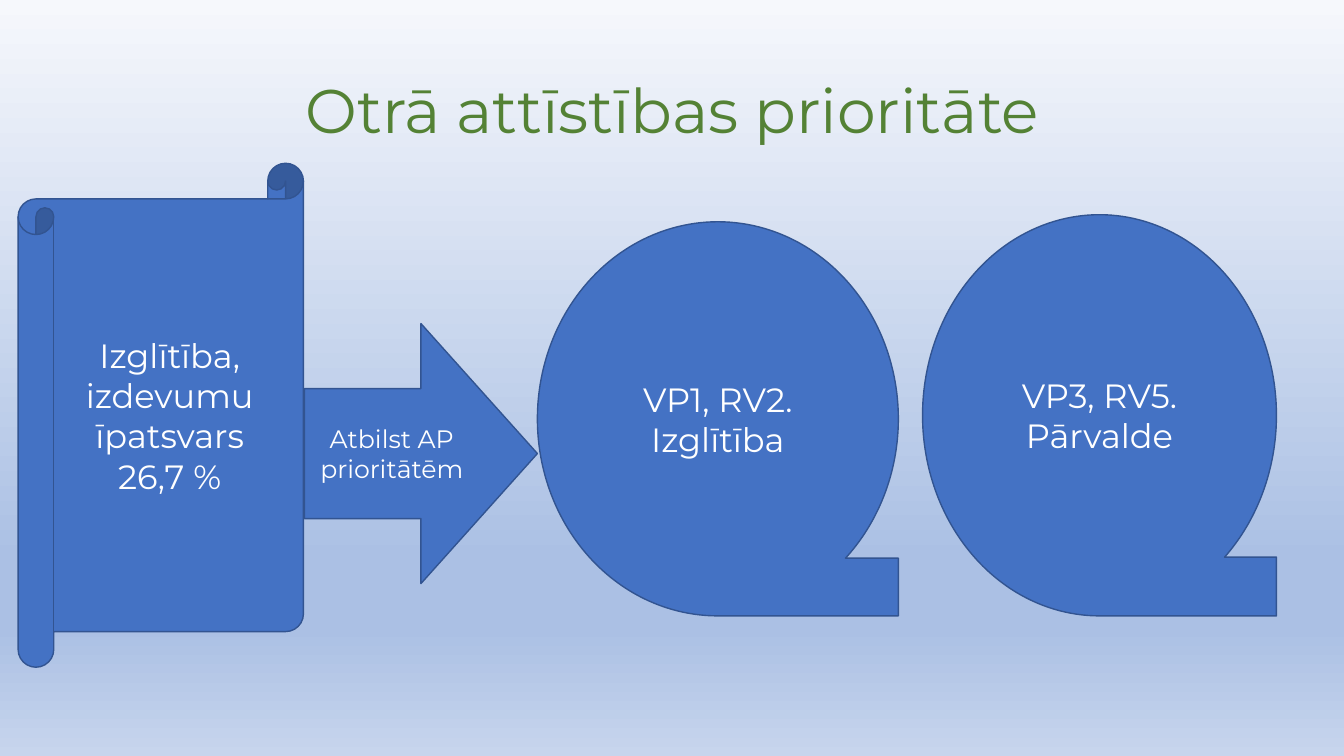
from lxml import etree
from pptx import Presentation
from pptx.dml.color import RGBColor
from pptx.enum.shapes import MSO_SHAPE
from pptx.enum.text import MSO_ANCHOR, PP_ALIGN
from pptx.oxml.ns import qn
from pptx.util import Inches, Pt

SCROLL = MSO_SHAPE.HORIZONTAL_SCROLL
ARROW = MSO_SHAPE.RIGHT_ARROW
TAPE = MSO_SHAPE.FLOWCHART_SEQUENTIAL_ACCESS_STORAGE
MIDDLE = MSO_ANCHOR.MIDDLE
CENTER = PP_ALIGN.CENTER

FONT = "Montserrat"
BLUE, OUTLINE, WHITE, GREEN = "4472C4", "325491", "FFFFFF", "548235"
SKY = [(0, "F6F8FC"), (74, "ABC0E4"), (83, "ABC0E4"), (100, "C7D5ED")]
SHAPES = [
    (SCROLL, (0.18, 1.62, 2.83, 5), "Izglītība, izdevumu īpatsvars 26,7 %", 24),
    (ARROW, (3.02, 3.21, 2.31, 2.58), "Atbilst AP prioritātēm", 18),
    (TAPE, (5.33, 2.2, 3.58, 3.91), "VP1, RV2. Izglītība", 24),
    (TAPE, (9.15, 2.13, 3.51, 3.98), "VP3, RV5. Pārvalde", 24),
]


def rgb(value):
    """Turn a hex string into a colour."""
    return RGBColor.from_string(value)


def paint_background(s, stops):
    """Fill the slide from top to bottom with the given gradient stops."""
    fill = s.background.fill
    fill.gradient()
    fill.gradient_angle = 270
    gs_lst = next(s._element.iter(qn("a:gsLst")))
    for gs in list(gs_lst):
        gs_lst.remove(gs)
    for percent, color in stops:
        gs = etree.SubElement(gs_lst, qn("a:gs"), pos=str(percent * 1000))
        etree.SubElement(gs, qn("a:srgbClr"), val=color)


def write(shape, text, size, color):
    """Write one centred paragraph in the middle of a shape."""
    tf = shape.text_frame
    tf.word_wrap = True
    tf.vertical_anchor = MIDDLE
    p = tf.paragraphs[0]
    p.text = text
    p.alignment = CENTER
    p.font.name = FONT
    p.font.size = Pt(size)
    p.font.color.rgb = rgb(color)
    return p


def add_title(s, text):
    """Place and format the slide title."""
    title = s.shapes.title
    title.left, title.top = Inches(0.92), Inches(0.4)
    title.width, title.height = Inches(11.5), Inches(1.45)
    write(title, text, 44, GREEN).line_spacing = 0.9


def add_block(s, kind, box, text, size):
    """Add a blue outlined shape with white text."""
    sp = s.shapes.add_shape(kind, *map(Inches, box))
    sp.shadow.inherit = False
    sp.fill.solid()
    sp.fill.fore_color.rgb = rgb(BLUE)
    sp.line.color.rgb = rgb(OUTLINE)
    sp.line.width = Pt(1)
    write(sp, text, size, WHITE)


def main():
    """Build the slide and save it."""
    prs = Presentation()
    prs.slide_width, prs.slide_height = Inches(13.33), Inches(7.5)
    s = prs.slides.add_slide(prs.slide_layouts[5])
    paint_background(s, SKY)
    add_title(s, "Otrā attīstības prioritāte")
    for block in SHAPES:
        add_block(s, *block)
    prs.save("out.pptx")


if __name__ == "__main__":
    main()
